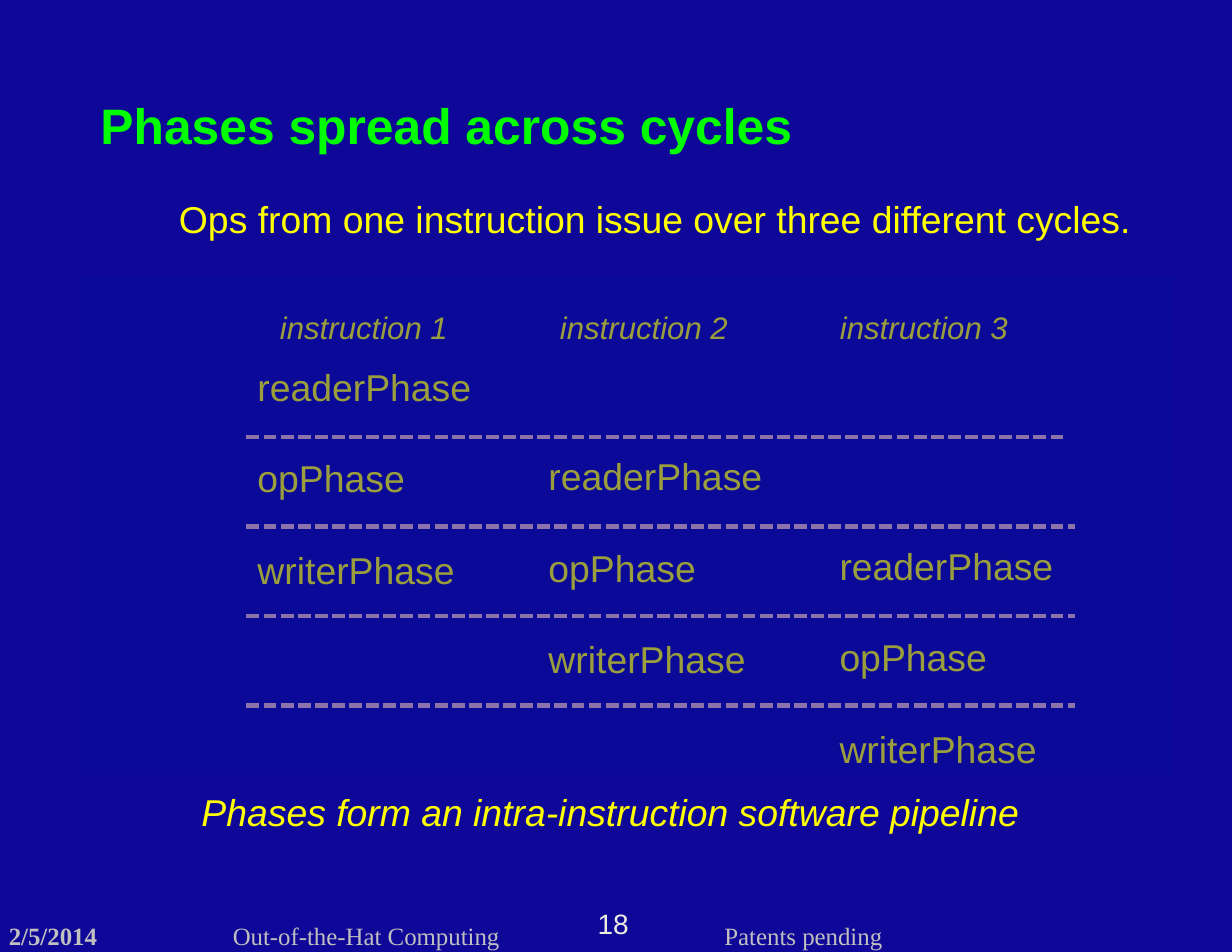
from pptx import Presentation
from pptx import util as u
from pptx.dml.color import RGBColor
from pptx.enum import dml, shapes, text
from pptx.oxml.ns import qn
from lxml import etree

YELLOW, GREEN, SILVER = "FFFF00", "00FF00", "C0C0C0"
ROSE, NAVY, VEIL, CREAM = "E6B9B8", "0E0797", "070E97", "EEECE1"
PHASES = ["readerPhase", "opPhase", "writerPhase"]


def color(code):
    return RGBColor.from_string(code)


def label(slide, box, lines, size, tint, font="Arial", bold=False,
          italic=False, pad=True, gap=0, align=text.PP_ALIGN.LEFT):
    """Put one paragraph per line into a text box; lengths are in cm."""
    frame = slide.shapes.add_textbox(*map(u.Cm, box)).text_frame
    frame.word_wrap = False
    if not pad:
        frame.margin_left = frame.margin_right = 0
        frame.margin_top = frame.margin_bottom = 0
    for i, line in enumerate(lines):
        para = frame.add_paragraph() if i else frame.paragraphs[0]
        para.alignment = align
        if i:
            para.space_before = u.Pt(gap)
        run = para.add_run()
        run.text = line
        run.font.name, run.font.size = font, u.Pt(size)
        run.font.bold, run.font.italic = bold, italic
        run.font.color.rgb = color(tint)


def rule(slide, left, right, top):
    line = slide.shapes.add_connector(
        shapes.MSO_CONNECTOR.STRAIGHT, *map(u.Cm, (left, top, right, top)))
    line.line.color.rgb = color(ROSE)
    line.line.width = u.Pt(2.75)
    line.line.dash_style = dml.MSO_LINE.SQUARE_DOT
    # SQUARE_DOT is sysDot in the file; the rules use sysDash
    props = line._element.spPr
    props.find(".//" + qn("a:prstDash")).set("val", "sysDash")
    etree.SubElement(props, qn("a:effectLst"))


def heading(slide, box):
    left, top, _, _ = box
    label(slide, (left, top, 16.36, 1.57), ["Phases spread across cycles"],
          32, GREEN, bold=True)
    label(slide, (left + 1.78, top + 2.29, 22.81, 1.27),
          ["Ops from one instruction issue over three different cycles."],
          24, YELLOW)


def pipeline(slide, box):
    left, top, wide, high = box
    # Each instruction starts one cycle after the one before it
    for i in range(3):
        label(slide, (left + 4.3 + 6.35 * i, top + 0.59, 4.34, 1.12),
              [f"instruction {i + 1}"], 20, YELLOW, italic=True)
        label(slide, (left + 3.79 + 6.6 * i, top + 1.86 + 2.03 * i, 5.41, 5.38),
              PHASES, 24, YELLOW, gap=30)
    # Cycle borders
    for i in range(4):
        right = left + (22.58 if i else 22.33)
        rule(slide, left + 3.79, right, top + 3.64 + 2.03 * i)
    # Dimming veil over the table
    veil = slide.shapes.add_shape(shapes.MSO_SHAPE.RECTANGLE,
                                  *map(u.Cm, (left, top, wide, high)))
    veil.shadow.inherit = False
    veil.line.fill.background()
    veil.fill.solid()
    veil.fill.fore_color.rgb = color(VEIL)
    tone = veil._element.spPr.find(".//" + qn("a:srgbClr"))
    etree.SubElement(tone, qn("a:alpha")).set("val", "40000")


def footer(slide, box):
    left, top, _, high = box
    notes = [(0, 2.54, "2/5/2014", True),
             (5.08, 6.25, "Out-of-the-Hat Computing", False),
             (16.23, 3.61, "Patents pending", False)]
    for x, wide, words, bold in notes:
        label(slide, (left + x, top + 0.33, wide, high - 0.33), [words], 16,
              SILVER, font="Times New Roman", bold=bold, pad=False)
    label(slide, (left + 13.31, top, 0.79, 0.76), ["18"], 18, CREAM,
          pad=False, align=text.PP_ALIGN.CENTER)


def main():
    deck = Presentation()
    deck.slide_width, deck.slide_height = u.Cm(27.94), u.Cm(21.59)
    slide = deck.slides.add_slide(deck.slide_layouts[6])
    slide.background.fill.solid()
    slide.background.fill.fore_color.rgb = color(NAVY)

    footer(slide, (0.2, 20.55, 27.5, 1))
    heading(slide, (2.03, 2.03, 24.6, 3.56))
    # Closing remark
    label(slide, (4.32, 17.78, 19.25, 1.27),
          ["Phases form an intra-instruction software pipeline"],
          24, YELLOW, italic=True)
    pipeline(slide, (1.8, 6.27, 24.82, 11.3))
    deck.save("out.pptx")


if __name__ == "__main__":
    main()
